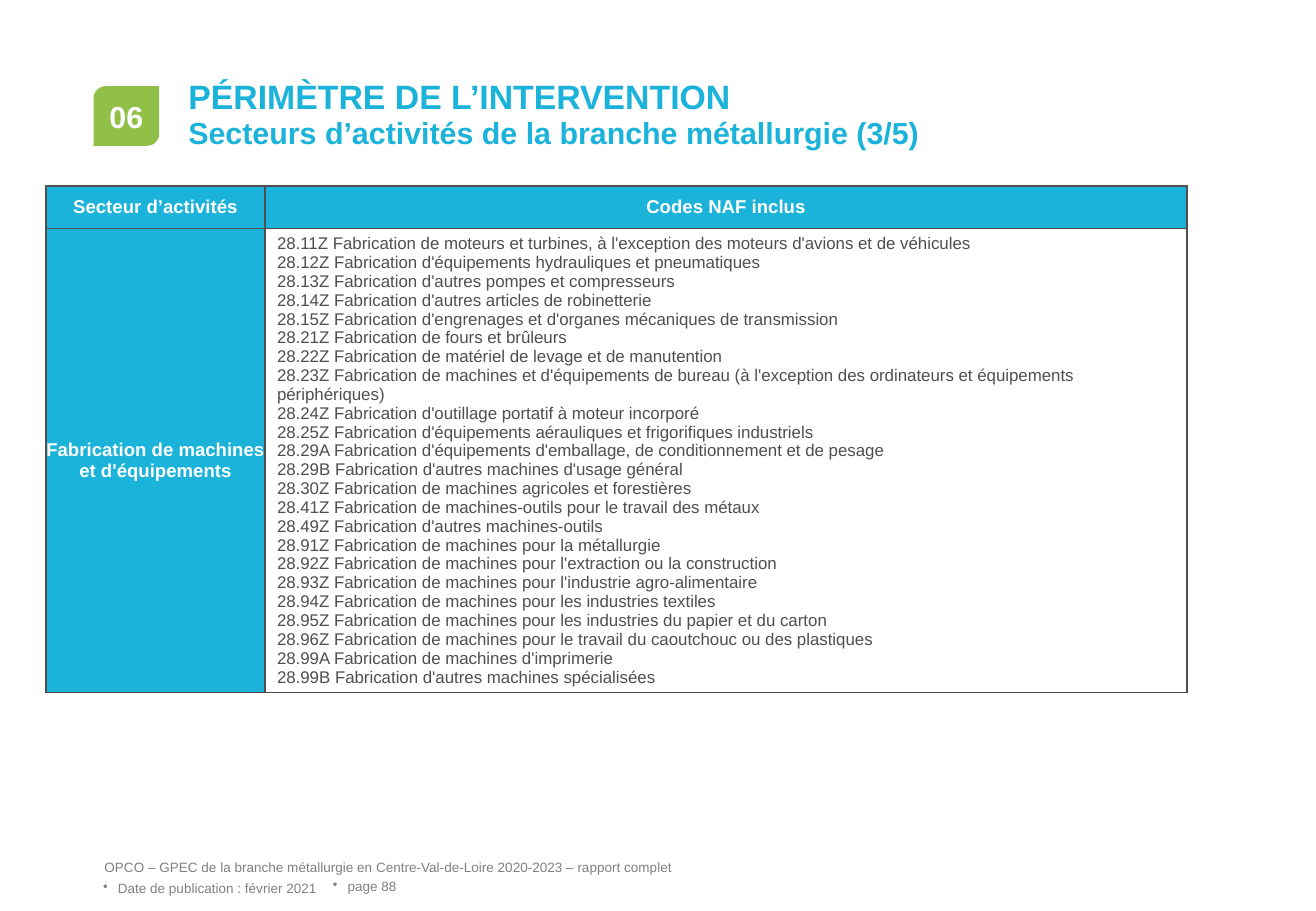
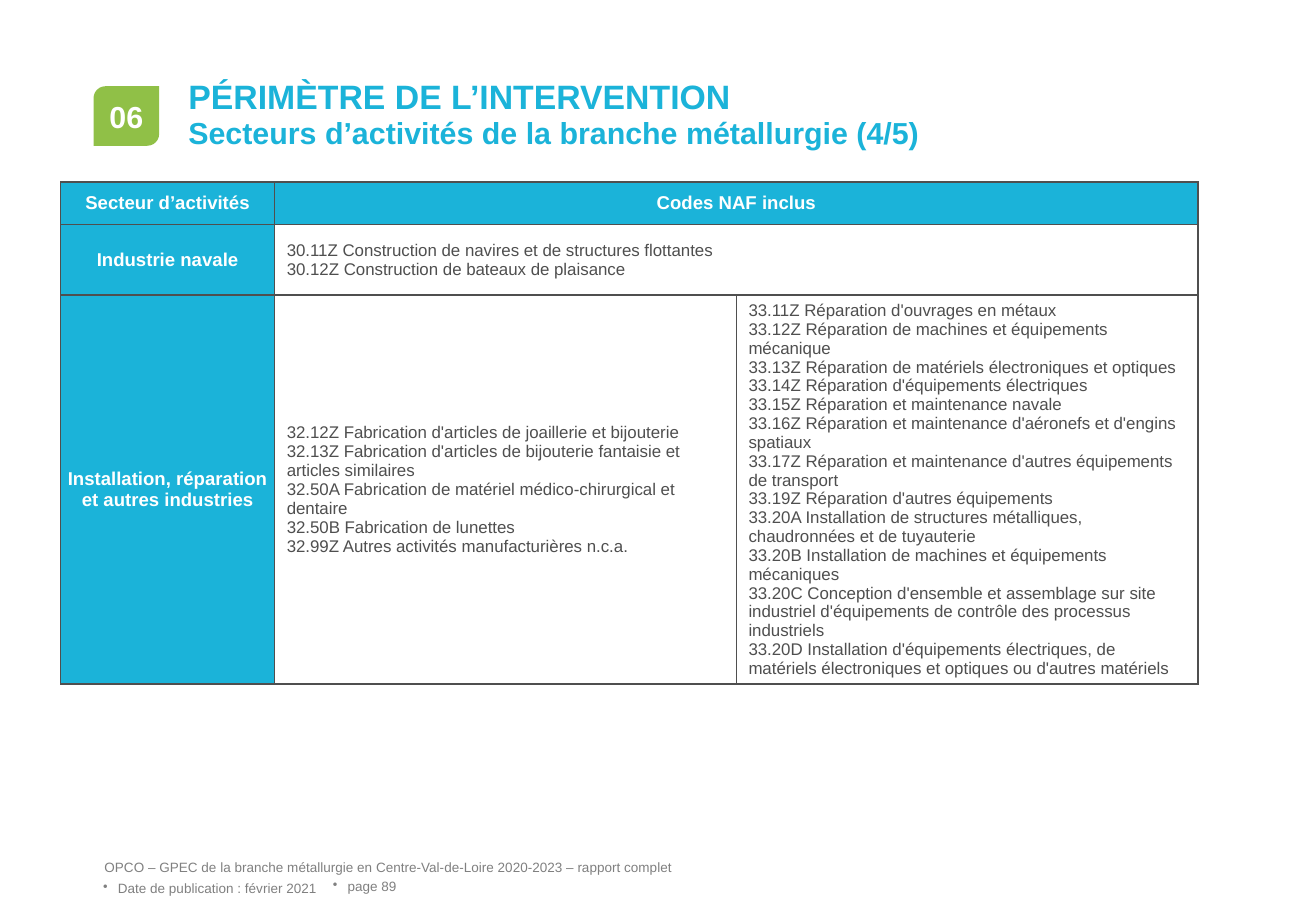
import pptx
import pptx.dml.color
import pptx.enum.shapes
import pptx.enum.text
import pptx.oxml.ns
import pptx.util
from lxml import etree

EMU_PER_PX = 9144
FONT = "Arial"
CYAN, GREEN, WHITE = "1BB3D9", "90C047", "FFFFFF"
DARK, GREY = "4F4F4F", "808080"
LEFT = pptx.enum.text.PP_ALIGN.LEFT
CENTER = pptx.enum.text.PP_ALIGN.CENTER
TOP = pptx.enum.text.MSO_ANCHOR.TOP
MIDDLE = pptx.enum.text.MSO_ANCHOR.MIDDLE
BOTTOM = pptx.enum.text.MSO_ANCHOR.BOTTOM

HEADERS = ["Secteur d’activités", "Codes NAF inclus"]
MACHINERY = [
    "28.11Z Fabrication de moteurs et turbines, à l'exception des moteurs d'avions et de véhicules",
    "28.12Z Fabrication d'équipements hydrauliques et pneumatiques",
    "28.13Z Fabrication d'autres pompes et compresseurs",
    "28.14Z Fabrication d'autres articles de robinetterie",
    "28.15Z Fabrication d'engrenages et d'organes mécaniques de transmission",
    "28.21Z Fabrication de fours et brûleurs",
    "28.22Z Fabrication de matériel de levage et de manutention",
    "28.23Z Fabrication de machines et d'équipements de bureau (à l'exception des ordinateurs et équipements périphériques)",
    "28.24Z Fabrication d'outillage portatif à moteur incorporé",
    "28.25Z Fabrication d'équipements aérauliques et frigorifiques industriels",
    "28.29A Fabrication d'équipements d'emballage, de conditionnement et de pesage",
    "28.29B Fabrication d'autres machines d'usage général",
    "28.30Z Fabrication de machines agricoles et forestières",
    "28.41Z Fabrication de machines-outils pour le travail des métaux",
    "28.49Z Fabrication d'autres machines-outils",
    "28.91Z Fabrication de machines pour la métallurgie",
    "28.92Z Fabrication de machines pour l'extraction ou la construction",
    "28.93Z Fabrication de machines pour l'industrie agro-alimentaire",
    "28.94Z Fabrication de machines pour les industries textiles",
    "28.95Z Fabrication de machines pour les industries du papier et du carton",
    "28.96Z Fabrication de machines pour le travail du caoutchouc ou des plastiques",
    "28.99A Fabrication de machines d'imprimerie",
    "28.99B Fabrication d'autres machines spécialisées",
]
SHIPBUILDING = [
    "30.11Z Construction de navires et de structures flottantes",
    "30.12Z Construction de bateaux de plaisance",
]
OTHER_INDUSTRIES = [
    "32.12Z Fabrication d'articles de joaillerie et bijouterie",
    "32.13Z Fabrication d'articles de bijouterie fantaisie et articles similaires",
    "32.50A Fabrication de matériel médico-chirurgical et dentaire",
    "32.50B Fabrication de lunettes",
    "32.99Z Autres activités manufacturières n.c.a.",
]
REPAIR = [
    "33.11Z Réparation d'ouvrages en métaux",
    "33.12Z Réparation de machines et équipements mécanique",
    "33.13Z Réparation de matériels électroniques et optiques",
    "33.14Z Réparation d'équipements électriques",
    "33.15Z Réparation et maintenance navale",
    "33.16Z Réparation et maintenance d'aéronefs et d'engins spatiaux",
    "33.17Z Réparation et maintenance d'autres équipements de transport",
    "33.19Z Réparation d'autres équipements",
    "33.20A Installation de structures métalliques, chaudronnées et de tuyauterie",
    "33.20B Installation de machines et équipements mécaniques",
    "33.20C Conception d'ensemble et assemblage sur site industriel d'équipements de contrôle des processus industriels",
    "33.20D Installation d'équipements électriques, de matériels électroniques et optiques ou d'autres matériels",
]


def px(length):
    """Turn px into EMU."""
    return pptx.util.Emu(length * EMU_PER_PX)


def color(hex_code):
    """Turn a hex string into a colour."""
    return pptx.dml.color.RGBColor.from_string(hex_code)


def set_margins(holder, margin):
    """Give a text frame or a cell the same margin on all four sides."""
    holder.margin_left = holder.margin_right = px(margin)
    holder.margin_top = holder.margin_bottom = px(margin)


def add_bullet(paragraph, indent):
    """Hang a round bullet in front of a paragraph."""
    properties = paragraph._p.get_or_add_pPr()
    properties.set("marL", str(px(indent)))
    properties.set("indent", str(-px(indent)))
    bullet = etree.SubElement(properties, pptx.oxml.ns.qn("a:buChar"))
    bullet.set("char", "•")


def write(frame, lines, size, hex_code, bold=False, align=LEFT, bullet_indent=0):
    """Write one paragraph per line, all in one style."""
    frame.text = "\n".join(lines)
    for paragraph in frame.paragraphs:
        paragraph.alignment = align
        if bullet_indent:
            add_bullet(paragraph, bullet_indent)
        paragraph.font.name = FONT
        paragraph.font.size = pptx.util.Pt(size)
        paragraph.font.bold = bold
        paragraph.font.color.rgb = color(hex_code)


def fit_frame(frame, anchor):
    """Remove the margins of a text frame, wrap it and anchor it."""
    set_margins(frame, 0)
    frame.word_wrap = True
    frame.auto_size = pptx.enum.text.MSO_AUTO_SIZE.NONE
    frame.vertical_anchor = anchor


def add_text(slide, box, text, size, hex_code, anchor=MIDDLE, **style):
    """Add a one-line text box."""
    frame = slide.shapes.add_textbox(*map(px, box)).text_frame
    fit_frame(frame, anchor)
    write(frame, [text], size, hex_code, **style)


def add_heading(slide, subtitle):
    """Set the title, the subtitle and the section badge."""
    title = slide.shapes.title
    title.left, title.top, title.width, title.height = map(px, (155, 53, 851, 43))
    fit_frame(title.text_frame, BOTTOM)
    write(title.text_frame, ["PÉRIMÈTRE DE L’INTERVENTION"], 20, CYAN, bold=True)
    add_text(slide, (155, 94, 851, 43), subtitle, 18, CYAN, anchor=TOP, bold=True)

    badge = slide.shapes.add_shape(
        pptx.enum.shapes.MSO_SHAPE.ROUND_2_DIAG_RECTANGLE, *map(px, (77, 71, 54, 49)))
    badge.adjustments[0] = 0.2
    badge.shadow.inherit = False
    badge.fill.solid()
    badge.fill.fore_color.rgb = color(GREEN)
    badge.line.fill.background()
    fit_frame(badge.text_frame, MIDDLE)
    write(badge.text_frame, ["06"], 18, WHITE, bold=True, align=CENTER)


def add_footer(slide, page):
    """Add the report name, the publication date and the page number."""
    report = "OPCO – GPEC de la branche métallurgie en Centre-Val-de-Loire 2020-2023 – rapport complet"
    add_text(slide, (86, 707, 787, 13), report, 8, GREY)
    add_text(slide, (85, 725, 187, 13), "Date de publication : février 2021", 8, GREY,
             bullet_indent=12)
    add_text(slide, (274, 723, 120, 13), f"page {page}", 8, GREY, anchor=TOP,
             bullet_indent=12)


def add_borders(cell):
    """Draw a thin dark line on each side of a cell."""
    properties = cell._tc.get_or_add_tcPr()
    for side in ("lnL", "lnR", "lnT", "lnB"):
        line = etree.SubElement(properties, pptx.oxml.ns.qn(f"a:{side}"))
        line.set("w", str(pptx.util.Pt(1)))
        fill = etree.SubElement(line, pptx.oxml.ns.qn("a:solidFill"))
        etree.SubElement(fill, pptx.oxml.ns.qn("a:srgbClr")).set("val", DARK)


def fill_cell(cell, hex_code):
    """Fill a cell and centre its text vertically."""
    add_borders(cell)
    cell.fill.solid()
    cell.fill.fore_color.rgb = color(hex_code)
    cell.vertical_anchor = MIDDLE


def add_label(cell, text):
    """Write a bold white label on cyan."""
    fill_cell(cell, CYAN)
    write(cell.text_frame, [text], 11, WHITE, bold=True, align=CENTER)


def add_sector_table(slide, left, top, widths, heights, sectors):
    """Add a table with one row per sector, its codes in one or more columns."""
    frame = slide.shapes.add_table(len(heights), len(widths), px(left), px(top),
                                   px(sum(widths)), px(sum(heights)))
    table = frame.table
    table.horz_banding = False
    for column, width in zip(table.columns, widths):
        column.width = px(width)
    for row, height in zip(table.rows, heights):
        row.height = px(height)

    last = len(widths) - 1
    for column, header in enumerate(HEADERS):
        add_label(table.cell(0, column), header)
    for row, (sector, code_lists) in enumerate(sectors, start=1):
        label = table.cell(row, 0)
        add_label(label, sector)
        set_margins(label, 0)
        for column, codes in enumerate(code_lists, start=1):
            cell = table.cell(row, column)
            fill_cell(cell, WHITE)
            write(cell.text_frame, codes, 10, DARK)

    filled_columns = [len(HEADERS) - 1] + [len(code_lists) for _, code_lists in sectors]
    for row, filled in enumerate(filled_columns):
        if filled < last:
            for column in range(filled + 1, last + 1):
                add_borders(table.cell(row, column))
            table.cell(row, filled).merge(table.cell(row, last))


def add_sector_slide(deck, part, page, **table):
    """Add one slide of the list of sectors."""
    slide = deck.slides.add_slide(deck.slide_layouts[5])
    add_heading(slide, f"Secteurs d’activités de la branche métallurgie ({part}/5)")
    add_sector_table(slide, **table)
    add_footer(slide, page)


def main():
    """Build and save the presentation."""
    deck = pptx.Presentation()
    deck.slide_width, deck.slide_height = px(1083), px(750)
    add_sector_slide(
        deck, 3, 88, left=38, top=153, widths=[180, 759], heights=[35, 382],
        sectors=[("Fabrication de machines et d'équipements", [MACHINERY])])
    add_sector_slide(
        deck, 4, 89, left=50, top=150, widths=[176, 380, 380], heights=[35, 58, 320],
        sectors=[("Industrie navale", [SHIPBUILDING]),
                 ("Installation, réparation et autres industries",
                  [OTHER_INDUSTRIES, REPAIR])])
    deck.save("out.pptx")


if __name__ == "__main__":
    main()
